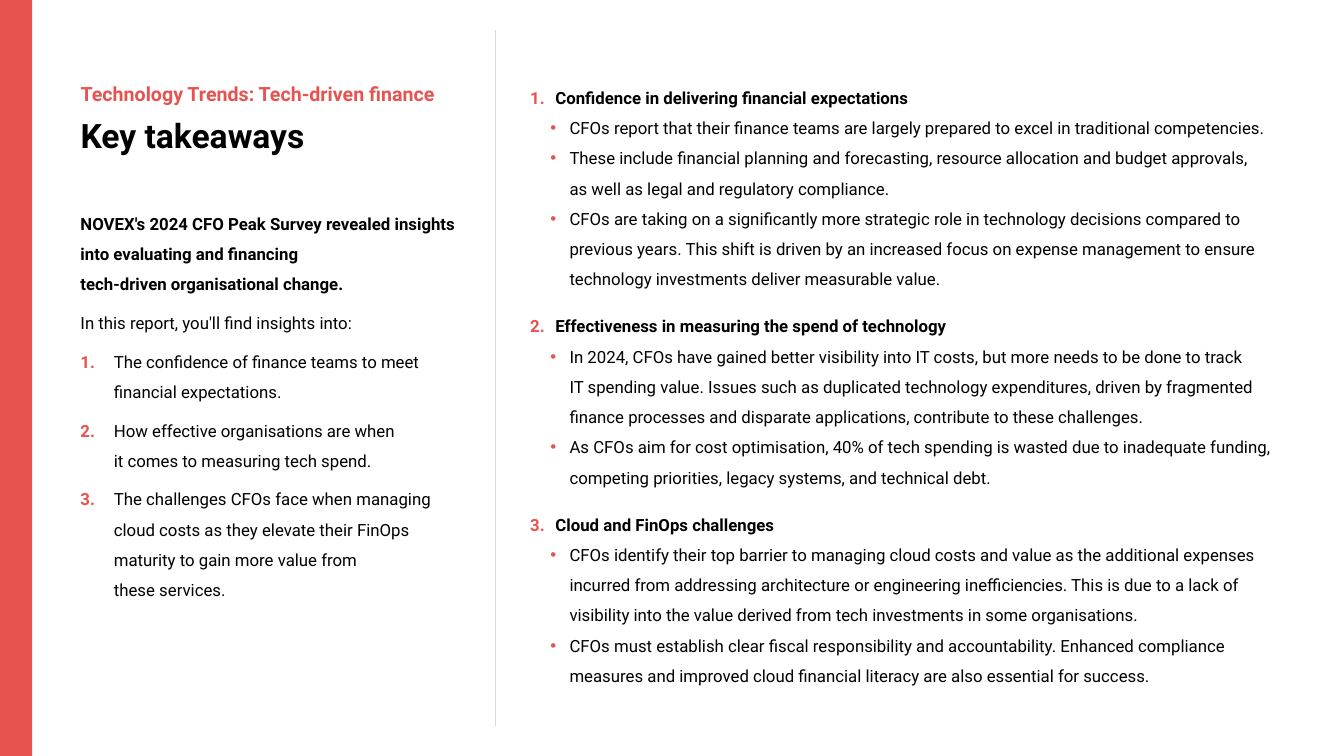
from copy import deepcopy
from dataclasses import dataclass

from lxml.etree import SubElement
from pptx import Presentation
from pptx.dml.color import RGBColor
from pptx.enum.shapes import MSO_CONNECTOR, MSO_SHAPE
from pptx.enum.text import MSO_AUTO_SIZE
from pptx.oxml.ns import qn
from pptx.util import Inches, Pt

HEADING = "Key takeaways"
KICKER = "Technology Trends: Tech-driven finance"
INTRO = (
    "NOVEX's 2024 CFO Peak Survey revealed insights into evaluating and financing\n"
    "tech-driven organisational change."
)
LEAD_IN = "In this report, you'll find insights into:"
INSIGHTS = [
    "The confidence of finance teams to meet\n financial expectations.",
    "How effective organisations are when\n it comes to measuring tech spend.",
    "The challenges CFOs face when managing\n cloud costs as they elevate their FinOps\n"
    " maturity to gain more value from\n these services.",
]
TAKEAWAYS = [
    ("Confidence in delivering financial expectations", [
        "CFOs report that their finance teams are largely prepared to excel in "
        "traditional competencies.",
        "These include financial planning and forecasting, resource allocation and "
        "budget approvals,\nas well as legal and regulatory compliance.",
        "CFOs are taking on a significantly more strategic role in technology decisions "
        "compared to previous years. This shift is driven by an increased focus on expense "
        "management to ensure technology investments deliver measurable value.",
    ]),
    ("Effectiveness in measuring the spend of technology", [
        "In 2024, CFOs have gained better visibility into IT costs, but more needs to be "
        "done to track\nIT spending value. Issues such as duplicated technology "
        "expenditures, driven by fragmented finance processes and disparate applications, "
        "contribute to these challenges.",
        "As CFOs aim for cost optimisation, 40% of tech spending is wasted due to "
        "inadequate funding, competing priorities, legacy systems, and technical debt.",
    ]),
    ("Cloud and FinOps challenges", [
        "CFOs identify their top barrier to managing cloud costs and value as the "
        "additional expenses incurred from addressing architecture or engineering "
        "inefficiencies. This is due to a lack of visibility into the value derived from "
        "tech investments in some organisations.",
        "CFOs must establish clear fiscal responsibility and accountability. Enhanced "
        "compliance measures and improved cloud financial literacy are also essential "
        "for success.",
    ]),
]


@dataclass(frozen=True)
class Theme:
    font: str = "Roboto"
    accent: str = "E7534F"
    ink: str = "000000"
    rule: str = "D9D9D9"
    heading: int = 24
    kicker: int = 14
    body: int = 12
    leading: float = 1.5


THEME = Theme()
WIDTH, HEIGHT = Inches(13.33), Inches(7.5)

# Left, top, width, height as percentages of the slide
BAR = (0, 0, 2.4, 100)
INTRO_AREA = (5.25, 26.27, 30.91, 53.87)
HEADING_AREA = (5.25, 14.53, 33.91, 6.67)
KICKER_AREA = (5.25, 10.13, 33.91, 4.53)
TAKEAWAYS_AREA = (38.71, 9.6, 58.51, 82.13)
DIVIDER_X, DIVIDER_TOP, DIVIDER_BOTTOM = 36.83, 4, 96

# Text indent and hanging indent in inches
INSIGHT_INDENT = (0.29, 0.29)
TITLE_INDENT = (0.25, 0.25)
POINT_INDENT = (0.39, 0.19)


def across(percent):
    return round(WIDTH * percent / 100)


def down(percent):
    return round(HEIGHT * percent / 100)


def place(area):
    left, top, width, height = area
    return across(left), down(top), across(width), down(height)


def add_text_area(slide, area):
    frame = slide.shapes.add_textbox(*place(area)).text_frame
    frame.word_wrap = True
    frame.auto_size = MSO_AUTO_SIZE.SHAPE_TO_FIT_TEXT
    return frame


def next_paragraph(frame, **formats):
    first = frame.paragraphs[0]
    paragraph = frame.add_paragraph() if first.runs else first
    for name, value in formats.items():
        setattr(paragraph, name, value)
    return paragraph


def write(paragraph, text, size=THEME.body, color=THEME.ink, bold=False):
    """Add text, turning each newline into a line break of the same size."""
    for index, line in enumerate(text.split("\n")):
        if index:
            paragraph.add_line_break()
            line_break = paragraph._p[-1]
        run = paragraph.add_run()
        run.text = line
        for name, value in dict(name=THEME.font, size=Pt(size), bold=bold).items():
            setattr(run.font, name, value)
        run.font.color.rgb = RGBColor.from_string(color)
        if index:
            line_break.append(deepcopy(run._r.rPr))


def mark(paragraph, indent, number=None):
    """Give a paragraph an accent number, or a dot when there is no number."""
    props = paragraph._p.get_or_add_pPr()
    margin, hanging = indent
    props.set("marL", str(Inches(margin)))
    props.set("indent", str(-Inches(hanging)))
    SubElement(SubElement(props, qn("a:buClr")), qn("a:srgbClr"), val=THEME.accent)
    if number is None:
        SubElement(props, qn("a:buFont"), typeface="Arial")
        SubElement(props, qn("a:buChar"), char="•")
    else:
        SubElement(props, qn("a:buFont"), typeface="+mj-lt")
        SubElement(props, qn("a:buAutoNum"), type="arabicPeriod", startAt=str(number))


def add_frame_art(slide):
    bar = slide.shapes.add_shape(MSO_SHAPE.RECTANGLE, *place(BAR))
    bar.shadow.inherit = False
    bar.fill.solid()
    bar.fill.fore_color.rgb = RGBColor.from_string(THEME.accent)
    bar.line.fill.background()

    x = across(DIVIDER_X)
    divider = slide.shapes.add_connector(
        MSO_CONNECTOR.STRAIGHT, x, down(DIVIDER_BOTTOM), x, down(DIVIDER_TOP))
    divider.line.color.rgb = RGBColor.from_string(THEME.rule)
    divider.line.width = Pt(0.5)
    SubElement(divider._element.spPr, qn("a:effectLst"))


def add_intro(slide):
    frame = add_text_area(slide, INTRO_AREA)
    spacing = dict(line_spacing=THEME.leading, space_after=Pt(6))
    write(next_paragraph(frame, **spacing), INTRO, bold=True)
    write(next_paragraph(frame, **spacing), LEAD_IN)
    for insight in INSIGHTS:
        paragraph = next_paragraph(frame, **spacing)
        mark(paragraph, INSIGHT_INDENT, number=1)
        write(paragraph, " ", bold=True)  # the number takes its weight from this run
        write(paragraph, insight)


def add_takeaways(slide):
    frame = add_text_area(slide, TAKEAWAYS_AREA)
    for number, (title, points) in enumerate(TAKEAWAYS, start=1):
        paragraph = next_paragraph(frame, line_spacing=THEME.leading)
        mark(paragraph, TITLE_INDENT, number)
        write(paragraph, title, bold=True)
        for point in points:
            paragraph = next_paragraph(frame, line_spacing=THEME.leading)
            mark(paragraph, POINT_INDENT)
            write(paragraph, point)
        if number < len(TAKEAWAYS):
            paragraph.space_after = Pt(12)


def main():
    deck = Presentation()
    deck.slide_width, deck.slide_height = WIDTH, HEIGHT
    slide = deck.slides.add_slide(deck.slide_layouts[6])
    add_frame_art(slide)
    add_intro(slide)
    for area, text, size, color in (
        (HEADING_AREA, HEADING, THEME.heading, THEME.ink),
        (KICKER_AREA, KICKER, THEME.kicker, THEME.accent),
    ):
        write(next_paragraph(add_text_area(slide, area)), text, size, color, bold=True)
    add_takeaways(slide)
    deck.save("out.pptx")


if __name__ == "__main__":
    main()
